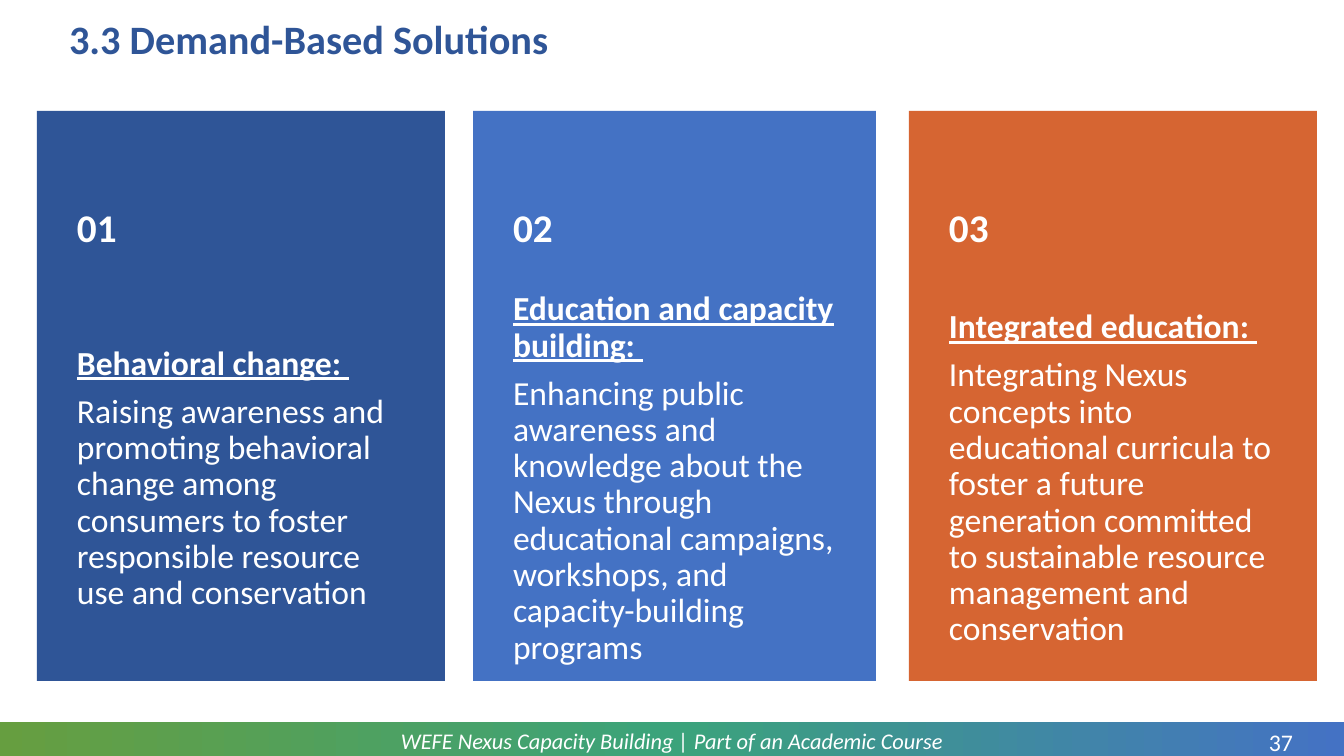
import copy
import pptx
import pptx.dml.color
import pptx.enum.shapes
import pptx.enum.text
import pptx.util

TITLE = "3.3 Demand-Based Solutions"
FOOTER = "WEFE Nexus Capacity Building | Part of an Academic Course"
PAGE = "37"
CARDS = [
    ("Behavioral change: ",
     "Raising awareness and promoting behavioral change among consumers to foster "
     "responsible resource use and conservation"),
    ("Education and capacity building: ",
     "Enhancing public awareness and knowledge about the Nexus through educational "
     "campaigns, workshops, and capacity-building programs"),
    ("Integrated education: ",
     "Integrating Nexus concepts into educational curricula to foster a future "
     "generation committed to sustainable resource management and conservation"),
]


class Theme:
    font = "Calibri"
    navy = "2F5597"
    white = "FFFFFF"
    cards = ["2F5597", "4472C4", "D66532"]
    band = [(0, "669E40"), (0.5, "3BA37B"), (1, "4472C4")]
    title_size = 28.8
    number_size = 28
    card_size = 24
    footer_size = 16
    page_size = 17


SLIDE_SIZE = (1344, 756)
CARD_LEFT, CARD_TOP, CARD_HEIGHT, CARD_PITCH = 37, 111, 570, 436
CARD_WIDTHS = [408, 403, 408]
NUMBER_TOP, NUMBER_HEIGHT = 154, 151
BAND_TOP = 722
CARD_INSETS = (40, 202, 40, 36)
NUMBER_INSETS = (40, 18, 40, 18)
TEXT_INSETS = (10, 5, 10, 5)


def px(length):
    return pptx.util.Emu(round(length * 914400 / 100.8))


def box(left, top, width, height):
    return [px(length) for length in (left, top, width, height)]


def color(value):
    return pptx.dml.color.RGBColor.from_string(value)


def write(shape, text, *, size, ink=Theme.white, bold=False, italic=False,
          underline=False, align="LEFT", line=1.0, after=0, insets=TEXT_INSETS,
          anchor="MIDDLE", append=False):
    frame = shape.text_frame
    frame.word_wrap = True
    frame.auto_size = pptx.enum.text.MSO_AUTO_SIZE.NONE
    frame.vertical_anchor = pptx.enum.text.MSO_ANCHOR[anchor]
    (frame.margin_left, frame.margin_top,
     frame.margin_right, frame.margin_bottom) = [px(inset) for inset in insets]
    paragraph = frame.add_paragraph() if append else frame.paragraphs[0]
    paragraph.alignment = pptx.enum.text.PP_ALIGN[align]
    paragraph.line_spacing = line
    paragraph.space_before = pptx.util.Pt(0)
    paragraph.space_after = pptx.util.Pt(after)
    run = paragraph.add_run()
    run.text = text
    run.font.name = Theme.font
    run.font.size = pptx.util.Pt(size)
    run.font.bold = bold
    run.font.italic = italic
    run.font.underline = underline
    run.font.color.rgb = color(ink)


def add_rectangle(slide, *place):
    shape = slide.shapes.add_shape(
        pptx.enum.shapes.MSO_SHAPE.RECTANGLE, *box(*place))
    shape.shadow.inherit = False
    shape.line.fill.background()
    return shape


def add_footer(slide):
    width, height = SLIDE_SIZE
    band = add_rectangle(slide, 0, BAND_TOP, width, height - BAND_TOP)
    band.fill.gradient()
    band.fill.gradient_angle = 0
    stops = band.fill.gradient_stops
    first = stops[0]._gs
    first.addnext(copy.deepcopy(first))
    for stop, (position, value) in zip(band.fill.gradient_stops, Theme.band):
        stop.position = position
        stop.color.rgb = color(value)
    credit = slide.shapes.add_textbox(*box(93, 723, 1158, 36))
    write(credit, FOOTER, size=Theme.footer_size, italic=True, align="CENTER")
    page = slide.shapes.add_textbox(*box(1251, 728, 60, 29))
    write(page, PAGE, size=Theme.page_size, align="CENTER",
          insets=(0, 0, 0, 0), anchor="TOP")


def add_card(slide, index, heading, body):
    left = CARD_LEFT + index * CARD_PITCH
    width = CARD_WIDTHS[index]
    card = add_rectangle(slide, left, CARD_TOP, width, CARD_HEIGHT)
    card.fill.solid()
    card.fill.fore_color.rgb = color(Theme.cards[index])
    style = dict(size=Theme.card_size, line=0.9, after=8.4, insets=CARD_INSETS)
    write(card, heading, bold=True, underline=True, **style)
    write(card, body, append=True, **style)
    number = slide.shapes.add_textbox(
        *box(left, NUMBER_TOP, width, NUMBER_HEIGHT))
    write(number, f"{index + 1:02}", size=Theme.number_size, bold=True,
          line=0.9, after=9.8, insets=NUMBER_INSETS)


def main():
    presentation = pptx.Presentation()
    presentation.slide_width, presentation.slide_height = map(px, SLIDE_SIZE)
    slide = presentation.slides.add_slide(presentation.slide_layouts[5])
    add_footer(slide)
    title = slide.shapes.title
    title.left, title.top, title.width, title.height = box(59, 13, 1225, 56)
    write(title, TITLE, size=Theme.title_size, ink=Theme.navy, bold=True, line=0.9)
    for index, (heading, body) in enumerate(CARDS):
        add_card(slide, index, heading, body)
    presentation.save("out.pptx")


if __name__ == "__main__":
    main()
